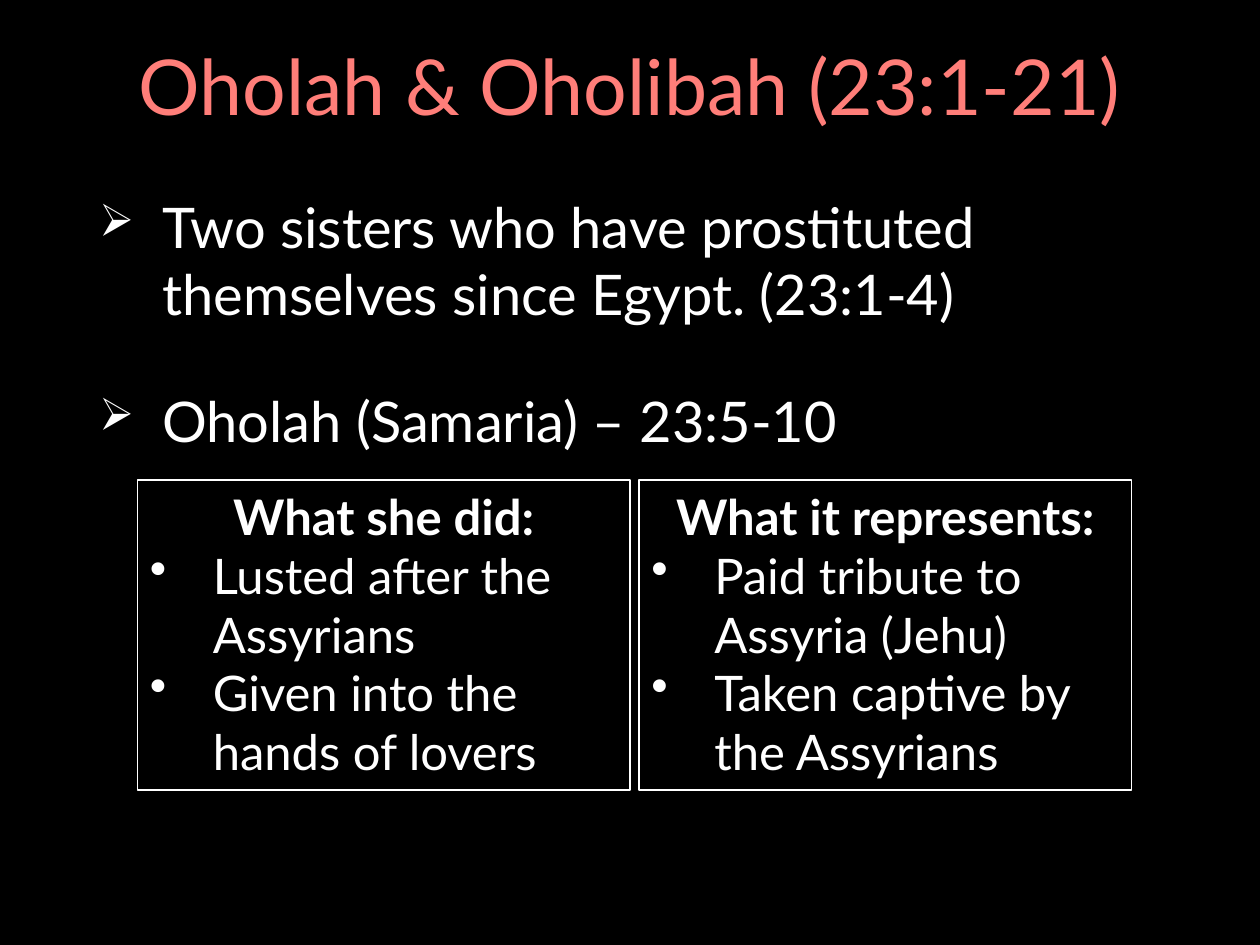
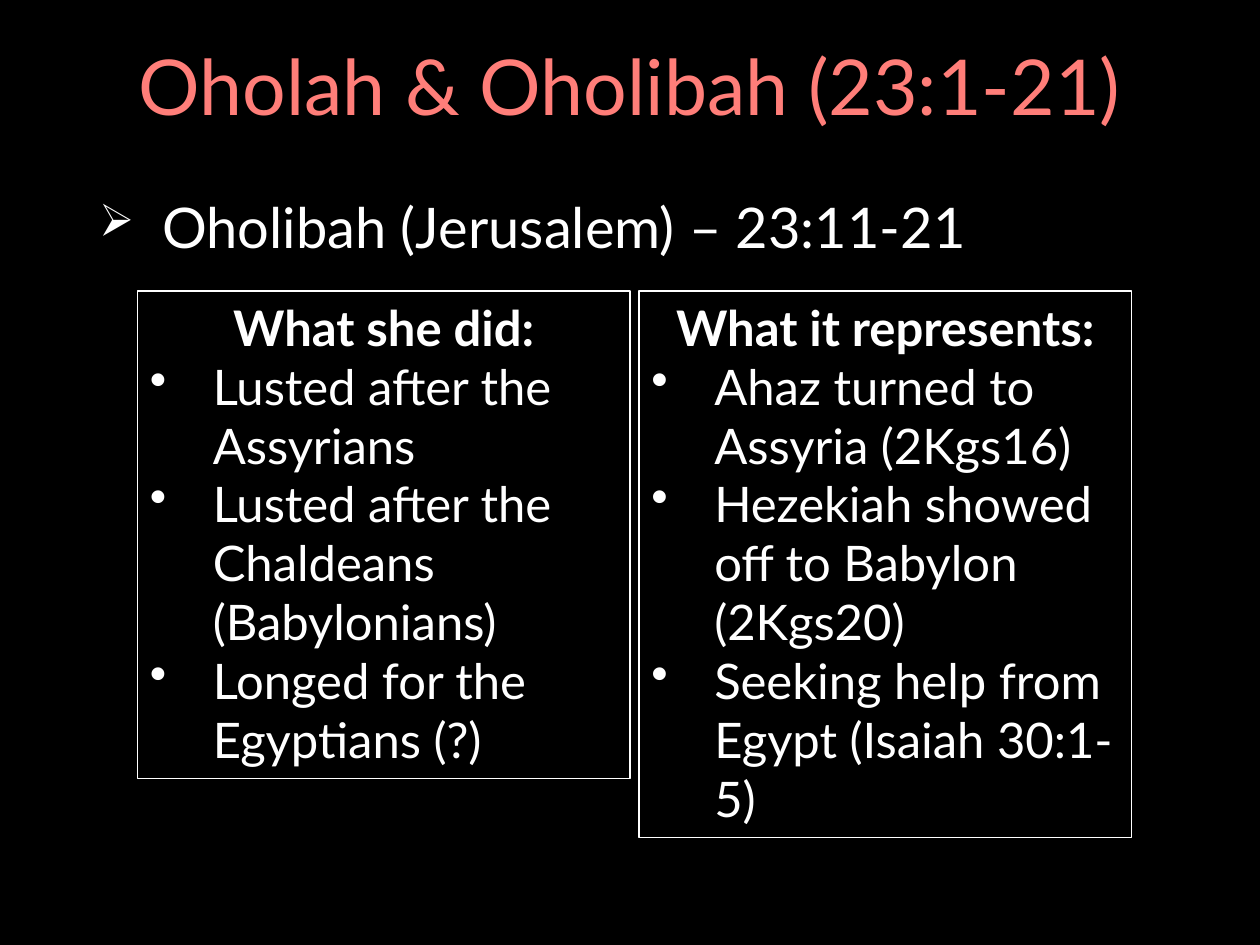
from dataclasses import dataclass

from lxml.etree import SubElement
from pptx import Presentation
from pptx.dml.color import RGBColor
from pptx.enum.shapes import MSO_SHAPE
from pptx.enum.text import MSO_ANCHOR, MSO_AUTO_SIZE, PP_ALIGN
from pptx.oxml.ns import qn
from pptx.util import Cm, Pt


@dataclass(frozen=True)
class Theme:
    background: RGBColor = RGBColor(0x00, 0x00, 0x00)
    title: RGBColor = RGBColor(0xFF, 0x7E, 0x79)
    text: RGBColor = RGBColor(0xFF, 0xFF, 0xFF)
    font: str = "Lato"
    title_size: int = 44
    point_size: int = 32
    panel_size: int = 28


THEME = Theme()
HEADING = "Oholah & Oholibah (23:1-21)"

# Boxes in cm: left, top, width, height
TITLE_BOX = (1.75, 0.41, 21.9, 2.82)
POINTS_BOX = (1.75, 3.76, 21.9, 13.69)
PANELS_LEFT, PANEL_WIDTH, PANEL_GAP = 2.77, 9.93, 0.18
PANEL_LINE, PANEL_PADDING = 1.19, 0.3
HANGING = Cm(1.27)


def write(frame, text, size, color=THEME.text, bold=False, align=PP_ALIGN.LEFT,
          bullet=None, bullet_percent=100, before=0, after=0, line_spacing=None):
    """Fill the empty first paragraph of the frame, or append another one."""
    first = not frame.text
    paragraph = frame.paragraphs[0] if first else frame.add_paragraph()
    paragraph.alignment = align
    paragraph.space_before = Pt(0 if first else before)
    paragraph.space_after = Pt(after)
    if line_spacing:
        paragraph.line_spacing = line_spacing
    if bullet:
        properties = paragraph._p.get_or_add_pPr()
        properties.set("marL", str(HANGING))
        properties.set("indent", str(-HANGING))
        SubElement(properties, qn("a:buSzPct"), val=str(bullet_percent * 1000))
        SubElement(properties, qn("a:buChar"), char=bullet)
    run = paragraph.add_run()
    run.text = text
    run.font.name = THEME.font
    run.font.size = Pt(size)
    run.font.bold = bold
    run.font.color.rgb = color


def add_frame(slide, box, anchor=MSO_ANCHOR.TOP):
    frame = slide.shapes.add_textbox(*map(Cm, box)).text_frame
    frame.word_wrap = True
    frame.vertical_anchor = anchor
    return frame


def add_title(slide, box):
    write(add_frame(slide, box, MSO_ANCHOR.MIDDLE), HEADING, THEME.title_size,
          color=THEME.title, align=PP_ALIGN.CENTER, line_spacing=0.9)


def add_points(slide, box, points):
    frame = add_frame(slide, box)
    for point in points:
        write(frame, point, THEME.point_size, bullet="➢", bullet_percent=80,
              before=4, after=30)


def add_panel(slide, box, heading, items):
    panel = slide.shapes.add_shape(MSO_SHAPE.RECTANGLE, *map(Cm, box))
    panel.shadow.inherit = False
    panel.fill.background()
    panel.line.color.rgb = THEME.text
    panel.line.width = Pt(0.75)
    frame = panel.text_frame
    frame.word_wrap = True
    frame.auto_size = MSO_AUTO_SIZE.SHAPE_TO_FIT_TEXT
    frame.vertical_anchor = MSO_ANCHOR.TOP
    write(frame, heading, THEME.panel_size, bold=True, align=PP_ALIGN.CENTER)
    for item in items:
        write(frame, item, THEME.panel_size, bullet="•")


def add_sister_slide(deck, points, panels_top, panels):
    slide = deck.slides.add_slide(deck.slide_layouts[6])
    slide.background.fill.solid()
    slide.background.fill.fore_color.rgb = THEME.background
    add_title(slide, TITLE_BOX)
    add_points(slide, POINTS_BOX, points)
    # Panels side by side, each as tall as its lines of text
    for column, (heading, line_count, items) in enumerate(panels):
        left = PANELS_LEFT + column * (PANEL_WIDTH + PANEL_GAP)
        height = line_count * PANEL_LINE + PANEL_PADDING
        add_panel(slide, (left, panels_top, PANEL_WIDTH, height), heading, items)


def main():
    deck = Presentation()
    deck.slide_width, deck.slide_height = Cm(25.4), Cm(19.05)
    did, represents = "What she did:", "What it represents:"

    # Oholah
    add_sister_slide(
        deck,
        ["Two sisters who have prostituted themselves since Egypt. (23:1-4)",
         "Oholah (Samaria) – 23:5-10"],
        9.68,
        [(did, 5, ["Lusted after the Assyrians",
                   "Given into the hands of lovers"]),
         (represents, 5, ["Paid tribute to Assyria (Jehu)",
                          "Taken captive by the Assyrians"])])

    # Oholibah
    add_sister_slide(
        deck,
        ["Oholibah (Jerusalem) – 23:11-21"],
        5.87,
        [(did, 8, ["Lusted after the Assyrians",
                   "Lusted after the Chaldeans (Babylonians)",
                   "Longed for the Egyptians (?)"]),
         (represents, 9, ["Ahaz turned to Assyria (2Kgs16)",
                          "Hezekiah showed off to Babylon (2Kgs20)",
                          "Seeking help from Egypt (Isaiah 30:1-5)"])])

    deck.save("out.pptx")


if __name__ == "__main__":
    main()
